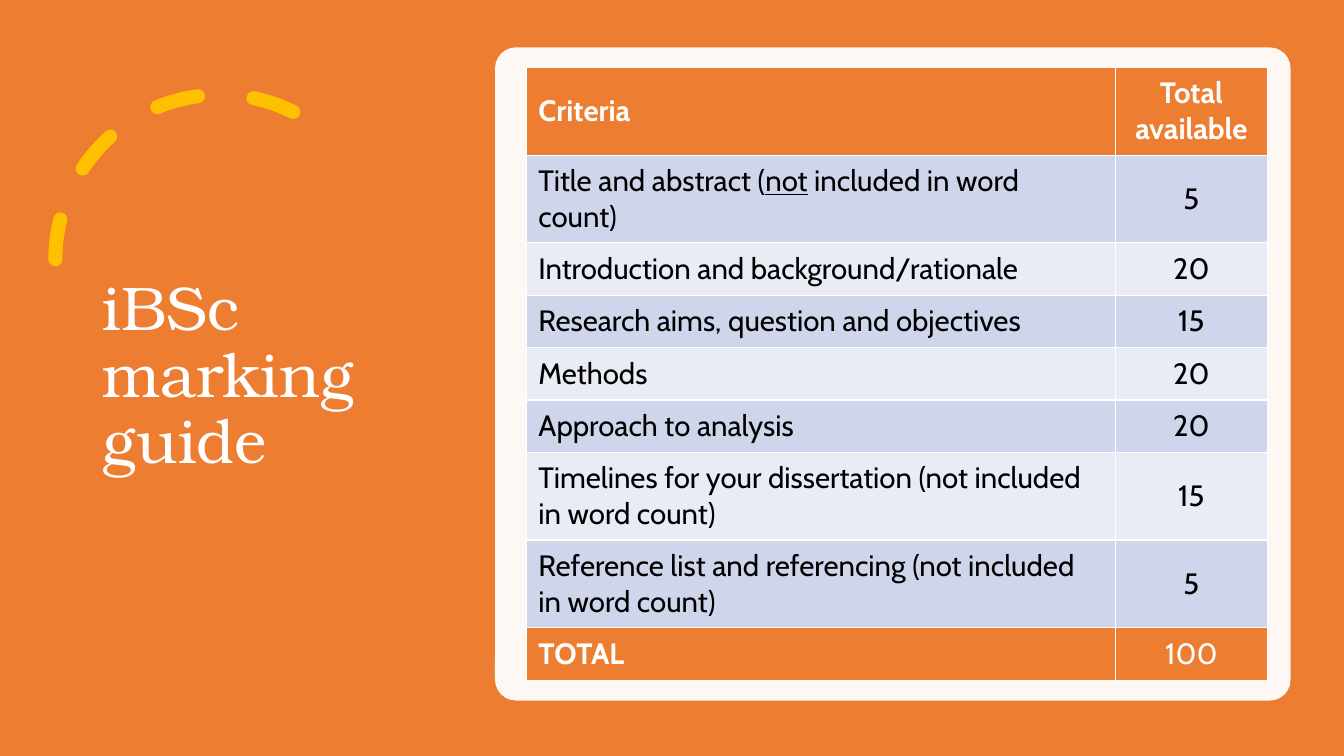
import pptx
import pptx.util
import pptx.dml.color
import pptx.enum.dml
import pptx.enum.shapes
import pptx.enum.text
import pptx.oxml
import pptx.oxml.ns

Inches = pptx.util.Inches
Pt = pptx.util.Pt
RGBColor = pptx.dml.color.RGBColor
Shapes = pptx.enum.shapes.MSO_SHAPE
Align = pptx.enum.text.PP_ALIGN
MIDDLE = pptx.enum.text.MSO_ANCHOR.MIDDLE

ORANGE = RGBColor(0xED, 0x7D, 0x31)
YELLOW = RGBColor(0xFF, 0xC0, 0x00)
WHITE = RGBColor(0xFF, 0xFF, 0xFF)
BLACK = RGBColor(0, 0, 0)
BANDS = (RGBColor(0xCF, 0xD5, 0xEA), RGBColor(0xE9, 0xEB, 0xF5))

WIDTH, HEIGHT = 13.33, 7.5
TITLE_FONT, TABLE_FONT = "TeX Gyre Bonum", "Cabin"
ONE_LINE, TWO_LINES = 0.52, 0.87  # row heights
CRITERIA_SHARE = 0.795  # share of the table width

# Each row: criterion as spans, marks, row height; every second span is underlined
ROWS = [
    (["Criteria"], "Total available", TWO_LINES),
    (["Title and abstract (", "not", " included in word count)"], "5", TWO_LINES),
    (["Introduction and background/rationale"], "20", ONE_LINE),
    (["Research aims, question and objectives"], "15", ONE_LINE),
    (["Methods"], "20", ONE_LINE),
    (["Approach to analysis"], "20", ONE_LINE),
    (["Timelines for your dissertation (not included in word count)"], "15", TWO_LINES),
    (["Reference list and referencing (not included in word count)"], "5", TWO_LINES),
    (["TOTAL"], "100", ONE_LINE),
]


def add_plain_shape(page, kind, box, fill=None):
    shape = page.shapes.add_shape(kind, *map(Inches, box))
    shape.shadow.inherit = False
    shape.line.fill.background()
    if fill is None:
        shape.fill.background()
    else:
        shape.fill.solid()
        shape.fill.fore_color.rgb = fill
    return shape


def style_span(span, font, size, color, bold=False):
    span.font.name = font
    span.font.size = Pt(size)
    span.font.color.rgb = color
    span.font.bold = bold


def add_backdrop(page, box):
    backdrop = add_plain_shape(page, Shapes.RECTANGLE, box, ORANGE)
    page.shapes.title.element.addprevious(backdrop.element)


def add_title_region(page, box):
    left, top, width, height = box
    # Dashed arc above the title
    size = 0.79 * width
    arc = add_plain_shape(page, Shapes.ARC, (left + 0.55, top + 0.94, size, size))
    arc.adjustments[0] = 146.13
    arc.adjustments[1] = 0
    arc.element.spPr.xfrm.set("flipH", "1")
    arc.line.color.rgb = YELLOW
    arc.line.width = Pt(10)
    arc.line.dash_style = pptx.enum.dml.MSO_LINE.DASH
    arc.element.spPr.find(pptx.oxml.ns.qn("a:ln")).set("cap", "rnd")
    title = page.shapes.title
    title.element.addprevious(arc.element)

    # Title
    title.left, title.top = Inches(left + 0.92), Inches(top + 0.7)
    title.width, title.height = Inches(0.78 * width), Inches(height - 1.41)
    frame = title.text_frame
    frame.text = "iBSc marking guide"
    frame.word_wrap = True
    frame.auto_size = pptx.enum.text.MSO_AUTO_SIZE.NONE
    frame.vertical_anchor = MIDDLE
    para = frame.paragraphs[0]
    para.alignment = Align.LEFT
    para.line_spacing = 0.9
    style_span(para.runs[0], TITLE_FONT, 44, WHITE)


def add_card(page, box):
    card = add_plain_shape(page, Shapes.ROUNDED_RECTANGLE, box, WHITE)
    card.adjustments[0] = 0.032
    color = card.element.spPr.find(".//" + pptx.oxml.ns.qn("a:srgbClr"))
    alpha = pptx.oxml.parse_xml(
        "<a:alpha %s val='95000'/>" % pptx.oxml.ns.nsdecls("a"))
    color.append(alpha)


def fill_cell(cell, spans, fill, color, bold, alignment):
    cell.fill.solid()
    cell.fill.fore_color.rgb = fill
    cell.vertical_anchor = MIDDLE
    cell.margin_left = cell.margin_right = Inches(0.12)
    cell.margin_top = cell.margin_bottom = Inches(0.06)
    para = cell.text_frame.paragraphs[0]
    para.alignment = alignment
    for index, text in enumerate(spans):
        span = para.add_run()
        span.text = text
        style_span(span, TABLE_FONT, 21, color, bold)
        if index % 2:
            span.font.underline = True


def add_marking_table(page, box):
    frame = page.shapes.add_table(len(ROWS), 2, *map(Inches, box))
    table = frame.table
    table.columns[0].width = Inches(box[2] * CRITERIA_SHARE)
    table.columns[1].width = Inches(box[2] * (1 - CRITERIA_SHARE))
    last = len(ROWS) - 1
    for index, (criterion, marks, height) in enumerate(ROWS):
        table.rows[index].height = Inches(height)
        accent = index in (0, last)
        fill = ORANGE if accent else BANDS[(index - 1) % 2]
        color = WHITE if accent else BLACK
        fill_cell(table.cell(index, 0), criterion, fill, color, accent, Align.LEFT)
        fill_cell(table.cell(index, 1), [marks], fill, color, index == 0, Align.CENTER)


def add_marking_region(page, box):
    left, top, width, height = box
    add_card(page, box)
    add_marking_table(page, (left + 0.31, top + 0.2, width - 0.54, height - 0.39))


def main():
    deck = pptx.Presentation()
    deck.slide_width, deck.slide_height = Inches(WIDTH), Inches(HEIGHT)
    page = deck.slides.add_slide(deck.slide_layouts[5])
    add_backdrop(page, (0, 0, WIDTH, HEIGHT))
    add_title_region(page, (0, 0, 0.31 * WIDTH, HEIGHT))
    add_marking_region(page, (4.91, 0.47, 7.89, 6.48))
    deck.save("out.pptx")


if __name__ == "__main__":
    main()
